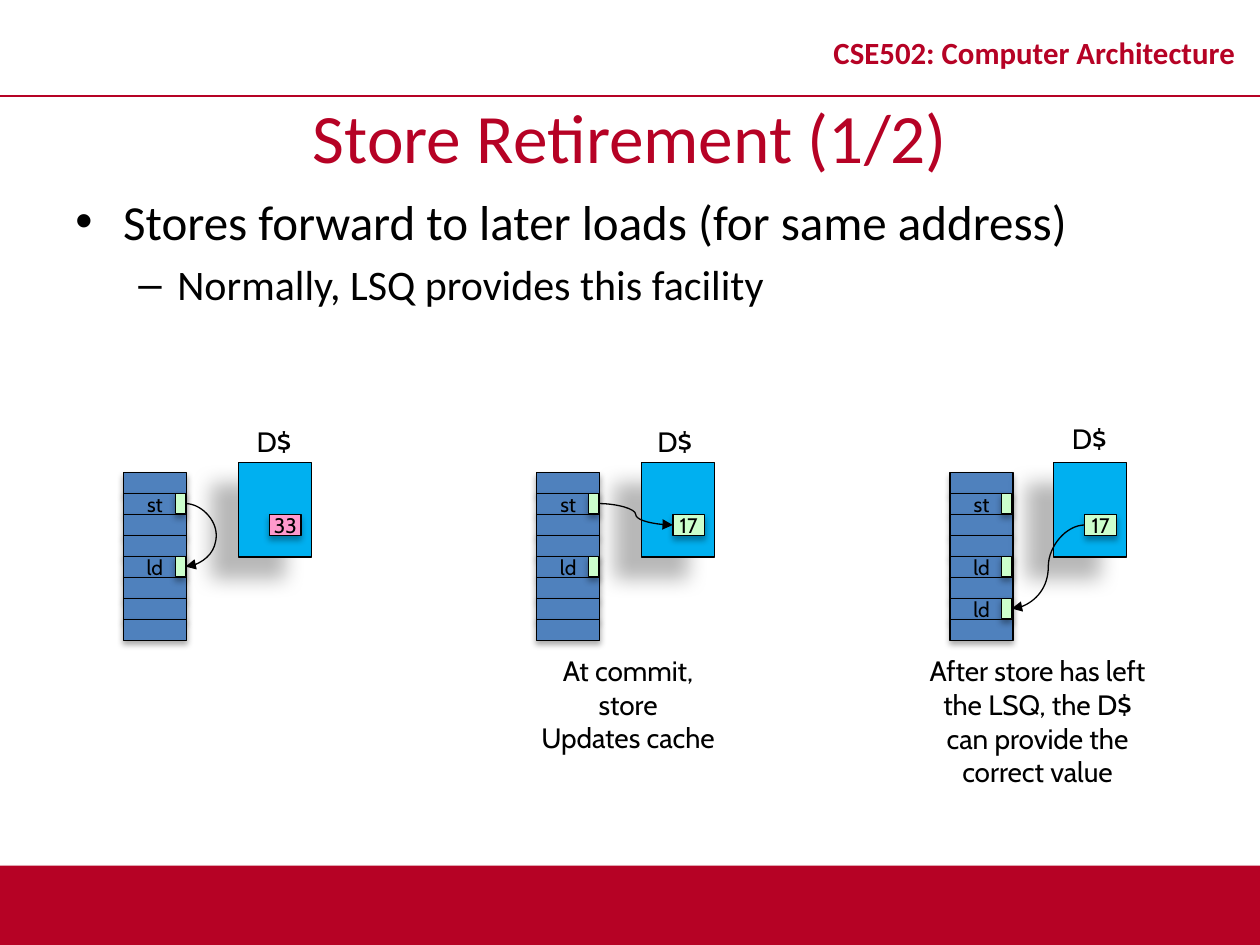
from dataclasses import dataclass

from lxml import etree
from pptx import Presentation
from pptx.dml.color import RGBColor
from pptx.enum.shapes import MSO_CONNECTOR, MSO_SHAPE
from pptx.enum.text import MSO_ANCHOR, MSO_AUTO_SIZE, PP_ALIGN
from pptx.oxml.ns import qn
from pptx.util import Inches, Pt

RECTANGLE = MSO_SHAPE.RECTANGLE
STRAIGHT, CURVE = MSO_CONNECTOR.STRAIGHT, MSO_CONNECTOR.CURVE
TOP, MIDDLE = MSO_ANCHOR.TOP, MSO_ANCHOR.MIDDLE
FIXED, GROW = MSO_AUTO_SIZE.NONE, MSO_AUTO_SIZE.SHAPE_TO_FIT_TEXT
LEFT, CENTER = PP_ALIGN.LEFT, PP_ALIGN.CENTER
LEFT_SIDE, RIGHT_SIDE = 1, 3


@dataclass(frozen=True)
class Theme:
    red: str = "B60225"
    black: str = "000000"
    queue: str = "4F81BD"
    cache: str = "00B0F0"
    green: str = "CCFFCC"
    pink: str = "FF99CC"
    heading_font: str = "Calibri"
    diagram_font: str = "Cabin"
    course_size: float = 17.6
    title_size: float = 39.6
    body_size: float = 28
    detail_size: float = 24
    caption_size: float = 16
    cell_size: float = 12
    # Shadows: opacity in percent, blur and distance in points, angle in degrees
    bar_shadow: tuple = (35, 3.1, 1.8, 90)
    cell_shadow: tuple = (32, 3.5, 2.2, 90)
    cache_shadow: tuple = (28, 11.8, 19.7, 141)


theme = Theme()


def write_text(shape, text, size=theme.caption_size, font=theme.diagram_font,
               color=theme.black, bold=False, align=CENTER, anchor=TOP,
               wrap=False, fit=FIXED, line_spacing=None, bullets=()):
    """Write one paragraph per line; bullets hold (mark, left, hanging, size, space before)."""
    frame = shape.text_frame
    frame.word_wrap = wrap
    frame.auto_size = fit
    frame.vertical_anchor = anchor
    for index, line in enumerate(text.split("\n")):
        paragraph = frame.paragraphs[0] if index == 0 else frame.add_paragraph()
        paragraph.alignment = align
        if line_spacing:
            paragraph.line_spacing = line_spacing
        if bullets:
            mark, left, hanging, size, space_before = bullets[index]
            paragraph.space_before = Pt(space_before)
            properties = paragraph._p.get_or_add_pPr()
            properties.set("marL", str(Inches(left)))
            properties.set("indent", str(Inches(-hanging)))
            etree.SubElement(properties, qn("a:buFont"), typeface="Arial")
            etree.SubElement(properties, qn("a:buChar"), char=mark)
        run = paragraph.add_run()
        run.text = line
        run.font.size = Pt(size)
        run.font.name = font
        run.font.bold = bold
        run.font.color.rgb = RGBColor.from_string(color)


def add_box(left, top, width, height, fill, shadow, text="", outlined=True):
    shape = slide.shapes.add_shape(
        RECTANGLE, Inches(left), Inches(top), Inches(width), Inches(height))
    shape.fill.solid()
    shape.fill.fore_color.rgb = RGBColor.from_string(fill)
    if outlined:
        shape.line.color.rgb = RGBColor.from_string(theme.black)
        shape.line.width = Pt(0.75)
    else:
        shape.line.fill.background()
    shape.shadow.inherit = False
    opacity, blur, distance, angle = shadow
    effects = shape._element.spPr.find(qn("a:effectLst"))
    outer = etree.SubElement(
        effects, qn("a:outerShdw"), blurRad=str(Pt(blur)), dist=str(Pt(distance)),
        dir=str(angle * 60000), algn="ctr", rotWithShape="0")
    shadow_color = etree.SubElement(outer, qn("a:srgbClr"), val=theme.black)
    etree.SubElement(shadow_color, qn("a:alpha"), val=str(opacity * 1000))
    if text:
        write_text(shape, text, size=theme.cell_size, anchor=MIDDLE)
    return shape


presentation = Presentation()
presentation.slide_width = Inches(10)
presentation.slide_height = Inches(7.5)
slide = presentation.slides.add_slide(presentation.slide_layouts[6])
shapes = slide.shapes

# Footer bar and header rule
add_box(0, 6.87, 10, 0.63, theme.red, theme.bar_shadow, outlined=False)
rule = shapes.add_connector(STRAIGHT, 0, Inches(0.76), Inches(10), Inches(0.76))
rule.line.color.rgb = RGBColor.from_string(theme.red)
rule.line.width = Pt(1)
etree.SubElement(rule._element.spPr, qn("a:effectLst"))

# Course name, title and bullets
course = shapes.add_textbox(Inches(6.42), Inches(0.13), Inches(3.58), Inches(0.63))
write_text(course, "CSE502: Computer Architecture", size=theme.course_size,
           font=theme.heading_font, color=theme.red, bold=True, anchor=MIDDLE,
           wrap=True, line_spacing=0.8)
title = shapes.add_textbox(0, Inches(0.76), Inches(10), Inches(0.63))
write_text(title, "Store Retirement (1/2)", size=theme.title_size,
           font=theme.heading_font, color=theme.red, anchor=MIDDLE, wrap=True)
body = shapes.add_textbox(Inches(0.5), Inches(1.47), Inches(9), Inches(5.35))
write_text(body, "Stores forward to later loads (for same address)\n"
                 "Normally, LSQ provides this facility",
           font=theme.heading_font, align=LEFT, wrap=True,
           bullets=[("•", 0.38, 0.38, theme.body_size, 0),
                    ("–", 0.81, 0.31, theme.detail_size, 4.8)])

# Three panels, each a load/store queue beside a data cache
QUEUE_LEFT, QUEUE_TOP, PANEL_PITCH = 0.98, 3.75, 3.28
ROW_COUNT, ROW_HEIGHT = 8, 1 / 6
MARKER_WIDTH, MARKER_HEIGHT = 0.08, 0.16
# Named queue rows, cache left, cache label left and top, cached value and its fill
panels = [
    ({1: "st", 4: "ld"}, 1.89, 1.93, 3.32, "33", theme.pink),
    ({1: "st", 4: "ld"}, 5.09, 5.11, 3.32, "17", theme.green),
    ({1: "st", 4: "ld", 6: "ld"}, 8.36, 8.4, 3.3, "17", theme.green),
]
markers, values = [], []
for panel, (names, cache_left, label_left, label_top, value, value_fill) in enumerate(panels):
    queue_left = QUEUE_LEFT + panel * PANEL_PITCH
    for row in range(ROW_COUNT):
        add_box(queue_left, QUEUE_TOP + row * ROW_HEIGHT, 0.5, ROW_HEIGHT,
                theme.queue, theme.cell_shadow, names.get(row, ""))
    markers.append({
        row: add_box(queue_left + 0.41, QUEUE_TOP + row * ROW_HEIGHT, MARKER_WIDTH,
                     MARKER_HEIGHT, theme.green, theme.cell_shadow)
        for row in names})
    add_box(cache_left, 3.67, 0.58, 0.75, theme.cache, theme.cache_shadow)
    values.append(add_box(cache_left + 0.25, QUEUE_TOP + 2 * ROW_HEIGHT, 0.25, ROW_HEIGHT,
                          value_fill, theme.cell_shadow, value))
    label = shapes.add_textbox(Inches(label_left), Inches(label_top), Inches(0.49), Inches(0.37))
    write_text(label, "D$", fit=GROW)

# Data flow: store to load, store to cache, cache to later load
BULGE, SLIVER = 0.25, 0.002
flows = [
    (markers[0][1], RIGHT_SIDE, markers[0][4], RIGHT_SIDE),
    (markers[1][1], RIGHT_SIDE, values[1], LEFT_SIDE),
    (values[2], LEFT_SIDE, markers[2][6], RIGHT_SIDE),
]
for source, source_side, target, target_side in flows:
    # Spanning the slide first keeps a connector unflipped unless it runs leftward
    flow = shapes.add_connector(
        CURVE, 0, 0, presentation.slide_width, presentation.slide_height)
    flow.begin_connect(source, source_side)
    flow.end_connect(target, target_side)
    if source_side == target_side:
        # The bend is a share of the width, so a loop needs a sliver of width
        flow.width = Inches(SLIVER)
        guides = flow._element.spPr.find(qn("a:prstGeom")).get_or_add_avLst()
        etree.SubElement(guides, qn("a:gd"), name="adj1",
                         fmla=f"val {round(BULGE / SLIVER * 100000)}")
    flow.line.color.rgb = RGBColor.from_string(theme.black)
    flow.line.width = Pt(0.75)
    etree.SubElement(flow.line._get_or_add_ln(), qn("a:tailEnd"), type="triangle")
    etree.SubElement(flow._element.spPr, qn("a:effectLst"))

# Captions
captions = [
    (4.11, 1.75, 0.64, "At commit, store\nUpdates cache"),
    (7.27, 1.93, 1.18, "After store has left\nthe LSQ, the D$\ncan provide the\ncorrect value"),
]
for left, width, height, text in captions:
    caption = shapes.add_textbox(Inches(left), Inches(5.14), Inches(width), Inches(height))
    write_text(caption, text, fit=GROW)

presentation.save("out.pptx")
